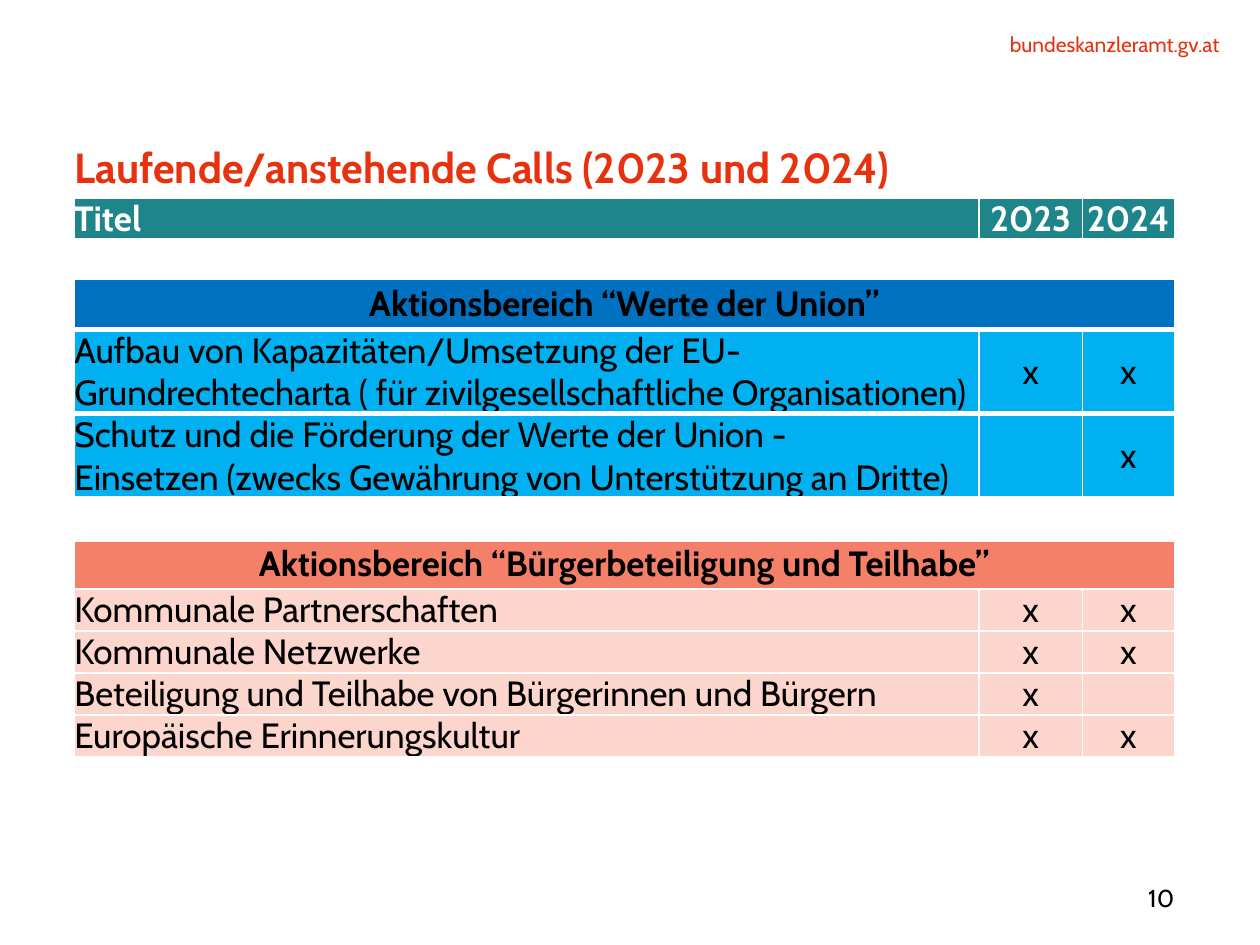
from lxml import etree
from pptx import Presentation
from pptx.dml.color import RGBColor
from pptx.enum.text import MSO_ANCHOR, PP_ALIGN
from pptx.oxml.ns import qn
from pptx.util import Inches, Pt

LEFT, CENTER, RIGHT = PP_ALIGN.LEFT, PP_ALIGN.CENTER, PP_ALIGN.RIGHT
TOP, MIDDLE = MSO_ANCHOR.TOP, MSO_ANCHOR.MIDDLE

FONT = "Cabin"
RED = RGBColor(0xE6, 0x32, 0x0F)
BLACK = RGBColor(0x00, 0x00, 0x00)
WHITE = RGBColor(0xFF, 0xFF, 0xFF)
TEAL = RGBColor(0x1E, 0x85, 0x8B)
DARK_BLUE = RGBColor(0x00, 0x70, 0xC0)
LIGHT_BLUE = RGBColor(0x00, 0xB0, 0xF0)
SALMON = RGBColor(0xF5, 0x80, 0x6A)
PALE_SALMON = RGBColor(0xFC, 0xD5, 0xCD)

THIN, THICK = 1, 3
COLUMN_WIDTHS = (7.18, 0.82, 0.73)

# Row kinds: fill, font colour, bold, merged, top border, bottom border
HEADER = (TEAL, WHITE, True, False, THIN, THICK)
GAP = (None, BLACK, False, True, THICK, THICK)
VALUES_TITLE = (DARK_BLUE, BLACK, True, True, THICK, THICK)
VALUES_CALL = (LIGHT_BLUE, BLACK, False, False, THICK, THICK)
CITIZENS_TITLE = (SALMON, BLACK, True, True, THICK, THIN)
CITIZENS_CALL = (PALE_SALMON, BLACK, False, False, THIN, THIN)

ROWS = (
    (HEADER, 0.33, ("Titel", "2023", "2024")),
    (GAP, 0.3, ("", "", "")),
    (VALUES_TITLE, 0.41, ("Aktionsbereich “Werte der Union”", "", "")),
    (VALUES_CALL, 0.67, (
        "Aufbau von Kapazitäten/Umsetzung der EU-Grundrechtecharta "
        "( für zivilgesellschaftliche Organisationen)", "x", "x")),
    (VALUES_CALL, 0.67, (
        "Schutz und die Förderung der Werte der Union -\n"
        "Einsetzen (zwecks Gewährung von Unterstützung an Dritte)", "", "x")),
    (GAP, 0.33, ("", "", "")),
    (CITIZENS_TITLE, 0.39,
     ("Aktionsbereich “Bürgerbeteiligung und Teilhabe”", "", "")),
    (CITIZENS_CALL, 0.33, ("Kommunale Partnerschaften", "x", "x")),
    (CITIZENS_CALL, 0.33, ("Kommunale Netzwerke", "x", "x")),
    (CITIZENS_CALL, 0.33,
     ("Beteiligung und Teilhabe von Bürgerinnen und Bürgern", "x", "")),
    (CITIZENS_CALL, 0.33, ("Europäische Erinnerungskultur", "x", "x")),
)


def format_text(frame, size, color, bold, align):
    for para in frame.paragraphs:
        para.alignment = align
        for span in para.runs:
            span.font.name = FONT
            span.font.size = Pt(size)
            span.font.bold = bold
            span.font.color.rgb = color


def clear_margins(holder):
    holder.margin_left = holder.margin_right = 0
    holder.margin_top = holder.margin_bottom = 0


def add_text(page, box, text, size, color, bold=False, align=LEFT,
             anchor=TOP, wrap=True):
    frame = page.shapes.add_textbox(*map(Inches, box)).text_frame
    clear_margins(frame)
    frame.word_wrap = wrap
    frame.vertical_anchor = anchor
    frame.text = text
    format_text(frame, size, color, bold, align)
    return frame


def set_borders(cell, top, bottom):
    """Draw white cell borders; widths are in points."""
    properties = cell._tc.get_or_add_tcPr()
    sides = (("L", THIN), ("R", THIN), ("T", top), ("B", bottom))
    for side, width in sides:
        line = etree.SubElement(properties, qn(f"a:ln{side}"), w=str(Pt(width)))
        fill = etree.SubElement(line, qn("a:solidFill"))
        etree.SubElement(fill, qn("a:srgbClr"), val=str(WHITE))


def fill_cell(cell, text, kind, align):
    fill, color, bold, _, top, bottom = kind
    set_borders(cell, top, bottom)
    if fill is None:
        cell.fill.background()
    else:
        cell.fill.solid()
        cell.fill.fore_color.rgb = fill
    clear_margins(cell)
    cell.vertical_anchor = MIDDLE
    if text:
        cell.text_frame.text = text
        format_text(cell.text_frame, 20, color, bold, align)


def add_calls_table(page, box):
    frame = page.shapes.add_table(len(ROWS), len(COLUMN_WIDTHS),
                                  *map(Inches, box))
    table = frame.table
    table.first_row = table.horz_banding = False
    for column, width in zip(table.columns, COLUMN_WIDTHS):
        column.width = Inches(width)
    for row_index, (kind, height, texts) in enumerate(ROWS):
        table.rows[row_index].height = Inches(height)
        merged = kind[3]
        if merged:
            last = table.cell(row_index, len(COLUMN_WIDTHS) - 1)
            table.cell(row_index, 0).merge(last)
        for column_index, text in enumerate(texts):
            align = CENTER if merged or column_index else LEFT
            fill_cell(table.cell(row_index, column_index), text, kind, align)


def add_title(page, box):
    frame = add_text(page, box, "Laufende/anstehende Calls (2023 und 2024)",
                     24, RED, bold=True, wrap=False)
    frame.paragraphs[0].line_spacing = Pt(30)


def main():
    deck = Presentation()
    deck.slide_width, deck.slide_height = Inches(10), Inches(7.5)
    page = deck.slides.add_slide(deck.slide_layouts[6])
    add_text(page, (7.27, 0.25, 2.41, 0.2), "bundeskanzleramt.gv.at", 12, RED,
             align=RIGHT)
    add_text(page, (8.43, 6.98, 0.89, 0.29), "10", 14, BLACK, align=RIGHT,
             anchor=MIDDLE)
    add_calls_table(page, (0.59, 1.57, 8.73, 4.43))
    add_title(page, (0.59, 1.11, 8.73, 0.91))
    deck.save("out.pptx")


if __name__ == "__main__":
    main()
